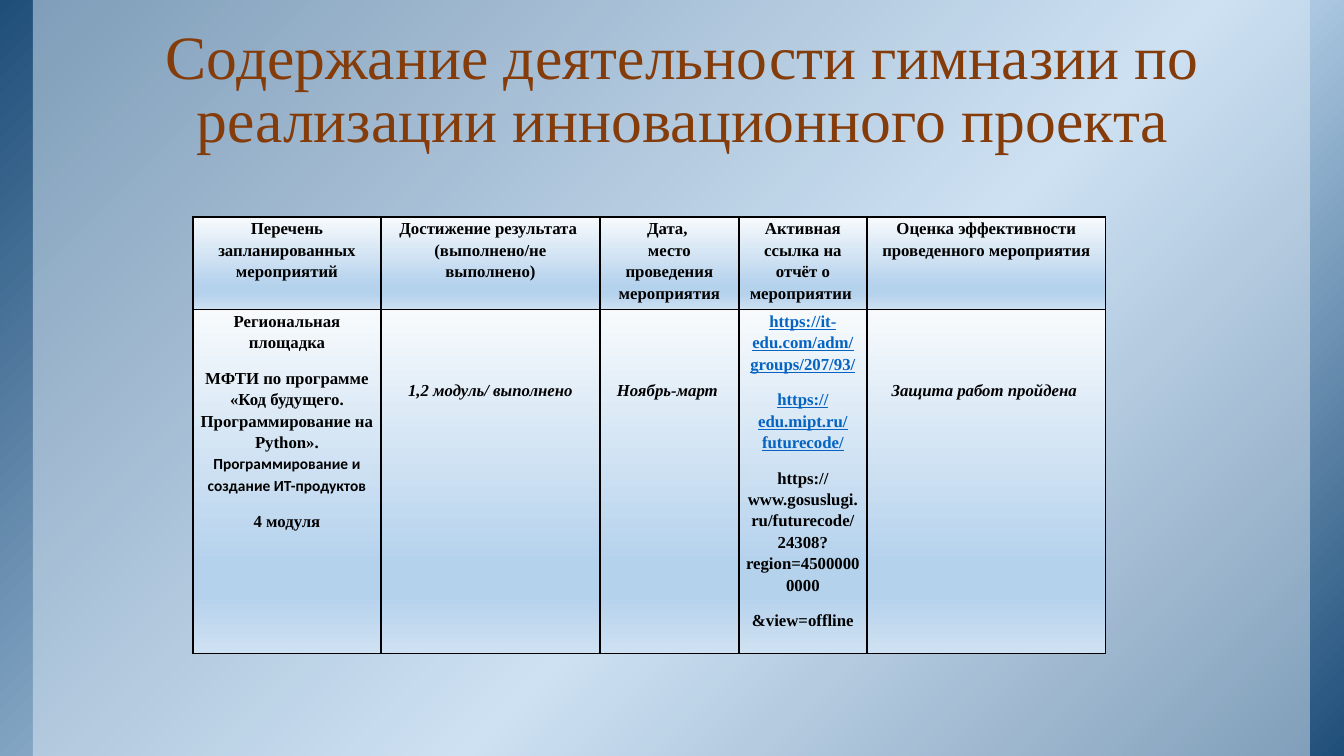
import pptx
import pptx.util
import pptx.dml.color
import pptx.enum.shapes
import pptx.enum.text
import pptx.oxml
import pptx.oxml.ns

RGB = pptx.dml.color.RGBColor
NAVY = RGB(0x1F, 0x4E, 0x79)
SKY = RGB(0xBD, 0xD7, 0xEE)
VEIL = RGB(0xDE, 0xEB, 0xF7)
BROWN = RGB(0x84, 0x3C, 0x0B)
BLACK = RGB(0, 0, 0)
LINK = RGB(0x05, 0x63, 0xC1)
PALE = RGB(0xF7, 0xFA, 0xFD)
BLUE = RGB(0xB5, 0xD2, 0xEC)
MIST = RGB(0xCE, 0xE1, 0xF2)

SERIF, SANS = "Times New Roman", "Calibri"
BACK = [(0, NAVY), (58, SKY), (100, NAVY)]
CELL = [(0, PALE), (74, BLUE), (83, BLUE), (100, MIST)]

TITLE = "Содержание деятельности гимназии по реализации инновационного проекта"
HEAD = [
    ["Перечень запланированных мероприятий"],
    ["Достижение результата ", "(выполнено/не выполнено)"],
    ["Дата, ", "место проведения мероприятия"],
    ["Активная ссылка на отчёт о мероприятии "],
    ["Оценка эффективности проведенного мероприятия"],
]
BODY = [
    ["Региональная площадка",
     "МФТИ по программе «Код будущего. Программирование на Python». ",
     "4 модуля"],
    ["1,2 модуль/ выполнено"],
    ["Ноябрь-март "],
    ["https://it-edu.com/adm/groups/207/93/",
     "https://edu.mipt.ru/futurecode/",
     "https://www.gosuslugi.ru/futurecode/24308?region=45000000000",
     "&view=offline"],
    ["Защита работ пройдена "],
]
TOPIC = "Программирование и создание ИТ-продуктов"
LINKS = BODY[3][:2]
COLS = [188, 219, 139, 128, 239]
ROWS = [86, 321]
DROP = 69  # px above the single-line results

WIDE, HIGH = 1344, 756


def px(n):
    return pptx.util.Emu(round(n * 914400 / 100.8))


def blend(item, node, stops, angle):
    """Fill with a gradient of any number of stops, angle clockwise."""
    item.fill.gradient()
    item.fill.gradient_angle = 360 - angle
    rows = node.find(".//" + pptx.oxml.ns.qn("a:gsLst"))
    for old in list(rows):
        rows.remove(old)
    for spot, tint in stops:
        rows.append(pptx.oxml.parse_xml(
            f'<a:gs {pptx.oxml.ns.nsdecls("a")} pos="{spot * 1000}">'
            f'<a:srgbClr val="{tint}"/></a:gs>'))


def edge(cell):
    props = cell._tc.get_or_add_tcPr()
    for i, side in enumerate("LRTB"):
        props.insert(i, pptx.oxml.parse_xml(
            f'<a:ln{side} {pptx.oxml.ns.nsdecls("a")} w="12700"><a:solidFill>'
            f'<a:srgbClr val="{BLACK}"/></a:solidFill></a:ln{side}>'))


def style(run, size, color, face=SERIF, bold=True):
    font = run.font
    font.name, font.size, font.bold = face, pptx.util.Pt(size), bold
    font.color.rgb = color


def panel(slide, left, width):
    box = slide.shapes.add_shape(
        pptx.enum.shapes.MSO_SHAPE.RECTANGLE, px(left), 0, px(width), px(HIGH))
    box.shadow.inherit = False
    box.line.fill.background()
    return box


def write(cell, lines, after):
    frame = cell.text_frame
    frame.text = "\n".join(lines)
    for para in frame.paragraphs:
        para.alignment = pptx.enum.text.PP_ALIGN.CENTER
        para.line_spacing = 1.15
        para.space_after = pptx.util.Pt(after)
        run = para.runs[0]
        style(run, 12, LINK if run.text in LINKS else BLACK)
        run.font.underline = run.text in LINKS
        if run.text == BODY[0][1]:
            extra = para.add_run()
            extra.text = TOPIC
            style(extra, 11, BLACK, SANS)


def main():
    deck = pptx.Presentation()
    deck.slide_width, deck.slide_height = px(WIDE), px(HIGH)
    slide = deck.slides.add_slide(deck.slide_layouts[6])

    back = panel(slide, 0, WIDE)
    blend(back, back._element, BACK, 45)
    veil = panel(slide, 33, 1277)
    veil.fill.solid()
    veil.fill.fore_color.rgb = VEIL
    tint = veil._element.spPr.find(".//" + pptx.oxml.ns.qn("a:srgbClr"))
    tint.append(pptx.oxml.parse_xml(
        f'<a:alpha {pptx.oxml.ns.nsdecls("a")} val="50000"/>'))

    title = slide.shapes.add_textbox(px(123), px(8), px(1120), px(154))
    frame = title.text_frame
    frame.word_wrap = True
    frame.vertical_anchor = pptx.enum.text.MSO_ANCHOR.BOTTOM
    frame.margin_left = frame.margin_right = px(13)
    frame.margin_top = frame.margin_bottom = px(7)
    frame.text = TITLE
    para = frame.paragraphs[0]
    para.alignment = pptx.enum.text.PP_ALIGN.CENTER
    para.line_spacing = 0.85
    style(para.runs[0], 44, BROWN, bold=False)

    table = slide.shapes.add_table(
        len(ROWS), len(COLS), px(193), px(217), px(sum(COLS)), px(sum(ROWS))).table
    table.first_row = table.horz_banding = False
    for col, width in zip(table.columns, COLS):
        col.width = px(width)
    for r, (height, texts) in enumerate(zip(ROWS, [HEAD, BODY])):
        table.rows[r].height = px(height)
        for c, lines in enumerate(texts):
            cell = table.cell(r, c)
            result = r == 1 and len(lines) == 1
            cell.margin_left = cell.margin_right = px(7)
            cell.margin_top = px(DROP if result else 0)
            cell.margin_bottom = 0
            write(cell, lines, 10 * r)
            if result:
                cell.text_frame.paragraphs[0].runs[0].font.italic = True
            blend(cell, cell._tc, CELL, 90)
            edge(cell)

    deck.save("out.pptx")


if __name__ == "__main__":
    main()
